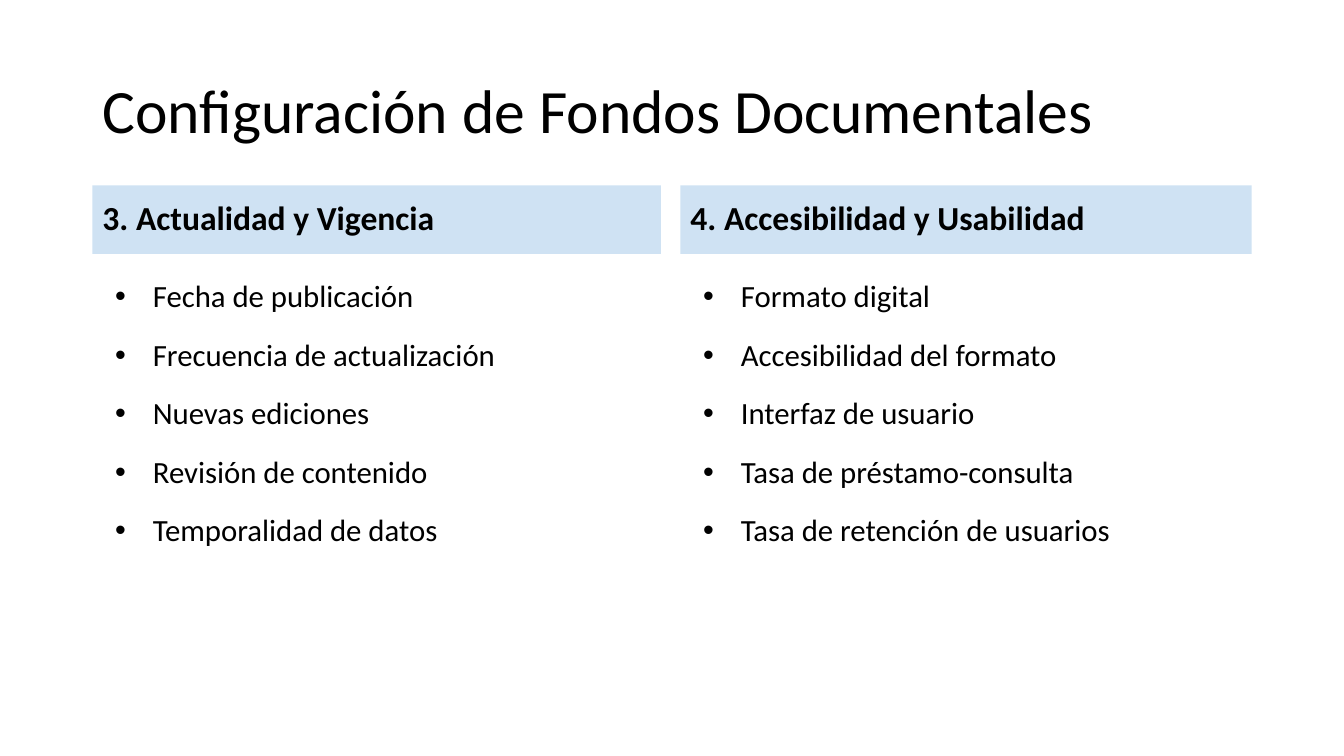
from lxml import etree
from pptx import Presentation
from pptx.dml.color import RGBColor
from pptx.enum.text import MSO_ANCHOR, MSO_AUTO_SIZE, PP_ALIGN
from pptx.oxml.ns import qn
from pptx.util import Pt

MIDDLE, TOP = MSO_ANCHOR.MIDDLE, MSO_ANCHOR.TOP
LEFT = PP_ALIGN.LEFT
NO_FIT = MSO_AUTO_SIZE.NONE
COMPARISON_LAYOUT = 4


def color(hex_value):
    return RGBColor.from_string(hex_value)


def write(box, lines, place, size, bold=False, anchor=MIDDLE, gap=0, bullet=None):
    box.left, box.top, box.width, box.height = [Pt(length) for length in place]
    frame = box.text_frame
    frame.word_wrap = True
    frame.auto_size = NO_FIT
    frame.vertical_anchor = anchor
    frame.margin_left = frame.margin_right = Pt(7.2)
    frame.margin_top = frame.margin_bottom = Pt(3.6)
    for number, line in enumerate(lines):
        para = frame.add_paragraph() if number else frame.paragraphs[0]
        if bullet:
            properties = para._p.get_or_add_pPr()
            properties.set("marL", str(Pt(36)))
            properties.set("indent", str(Pt(-27)))
            bullet_font = etree.SubElement(properties, qn("a:buFont"))
            bullet_font.set("typeface", "Arial")
            etree.SubElement(properties, qn("a:buChar")).set("char", bullet)
        para.alignment = LEFT
        para.line_spacing = 0.9
        para.space_before = Pt(gap if number else 0)
        para.space_after = Pt(0)
        span = para.add_run()
        span.text = line
        span.font.name = "Calibri"
        span.font.size = Pt(size)
        span.font.bold = bold
        span.font.color.rgb = color("000000")


deck = Presentation()
deck.slide_width, deck.slide_height = Pt(960), Pt(540)
page = deck.slides.add_slide(deck.slide_layouts[COMPARISON_LAYOUT])
title, *bodies = page.placeholders

# Title
write(title, ["Configuración de Fondos Documentales"], (66, 28.8, 828, 104.4), 44)

# Two columns, each a shaded heading over a bulleted list
columns = [
    (66, 406, "3. Actualidad y Vigencia",
     ["Fecha de publicación", "Frecuencia de actualización", "Nuevas ediciones",
      "Revisión de contenido", "Temporalidad de datos"]),
    (486, 408, "4. Accesibilidad y Usabilidad",
     ["Formato digital", "Accesibilidad del formato", "Interfaz de usuario",
      "Tasa de préstamo-consulta", "Tasa de retención de usuarios"]),
]
for (left, width, heading, items), header, listing in zip(columns, bodies[::2], bodies[1::2]):
    header.fill.solid()
    header.fill.fore_color.rgb = color("CFE2F3")
    write(header, [heading], (left, 132.4, width, 49), 24, bold=True)
    write(listing, items, (left, 197.3, width, 290), 22, anchor=TOP, gap=18, bullet="•")

deck.save("out.pptx")
